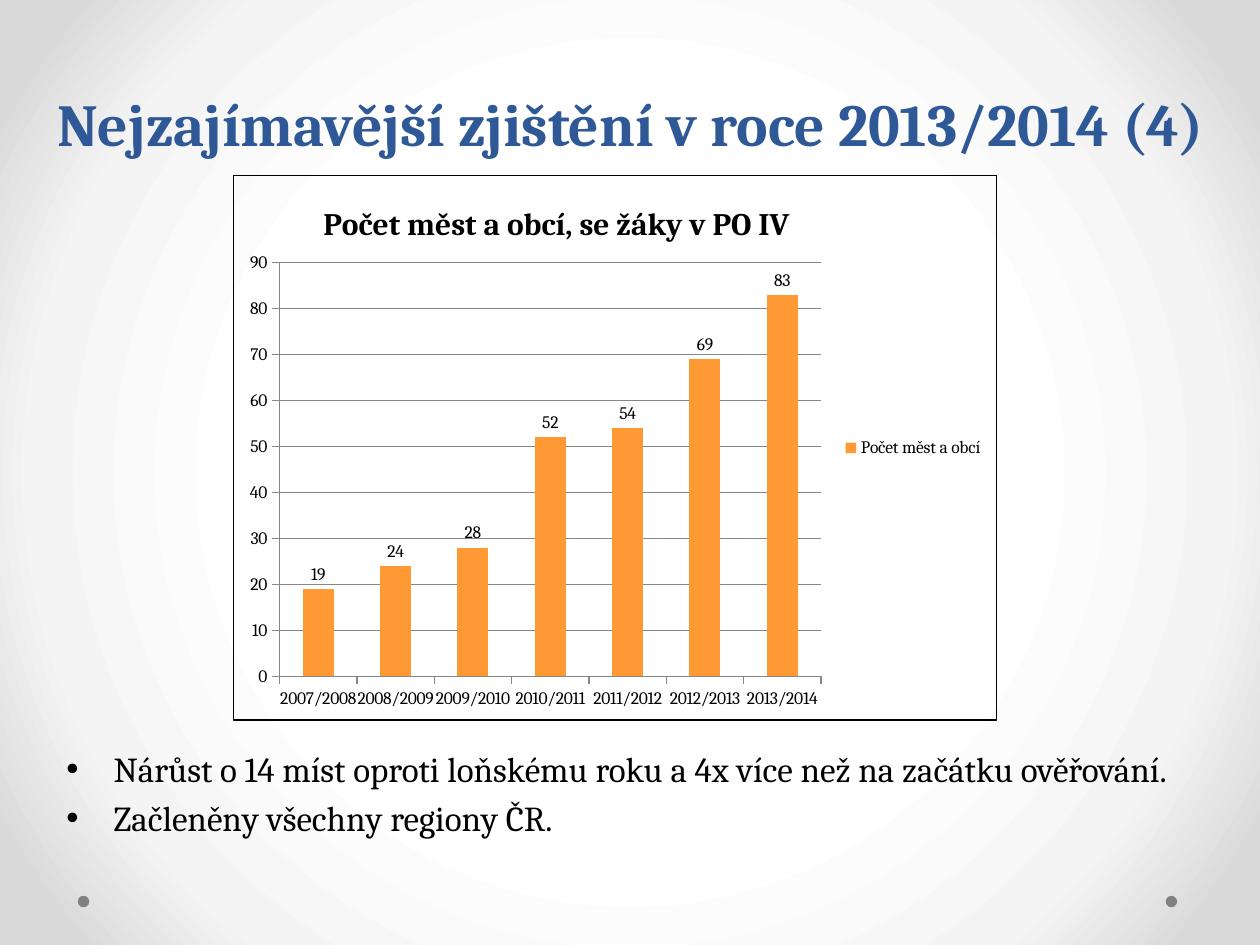
from dataclasses import dataclass

from pptx import Presentation
from pptx import util as u
from pptx.chart import data as chart_data
from pptx.dml import color as colors
from pptx.enum import chart as charts, shapes, text
from pptx.oxml import parse_xml
from pptx.oxml import ns


@dataclass(frozen=True)
class Theme:
    font: str = "Cambria"
    title: str = "2F5897"
    ink: str = "000000"
    bar: str = "FF9933"
    axis: str = "868686"
    dot: str = "808080"
    title_size: int = 34
    body_size: int = 20
    chart_title_size: int = 18
    chart_size: int = 10
    backdrop: tuple = ((50, "FFFFFF"), (76, "F4F4F4"), (92, "DADADA"))


@dataclass(frozen=True)
class Box:
    left: float
    top: float
    width: float
    height: float

    def lengths(self):
        return [u.Cm(v) for v in (self.left, self.top, self.width, self.height)]


THEME = Theme()
SERIES_NAME = "Počet měst a obcí"
COUNTS = [19, 24, 28, 52, 54, 69, 83]
YEARS = [f"{year}/{year + 1}" for year in range(2007, 2007 + len(COUNTS))]
FINDINGS = [
    "Nárůst o 14 míst oproti loňskému roku a 4x více než na začátku ověřování.",
    "Začleněny všechny regiony ČR.",
]


def rgb(value):
    return colors.RGBColor.from_string(value)


def apply(target, values):
    for name, value in values.items():
        setattr(target, name, value)


def style_font(font, size, color, bold=False):
    apply(font, {"name": THEME.font, "size": u.Pt(size), "bold": bold})
    font.color.rgb = rgb(color)


def paint_background(slide):
    slide.background.fill.gradient()
    gradient = slide.element.find(".//" + ns.qn("a:gradFill"))
    stops = "".join(
        f'<a:gs pos="{position * 1000}"><a:srgbClr val="{color}"/></a:gs>'
        for position, color in THEME.backdrop
    )
    gradient.getparent().replace(gradient, parse_xml(
        f'<a:gradFill {ns.nsdecls("a")} rotWithShape="1"><a:gsLst>{stops}</a:gsLst>'
        '<a:path path="circle"><a:fillToRect l="50000" t="50000" r="50000" b="50000"/>'
        "</a:path></a:gradFill>"
    ))


def add_dots(slide, box):
    size = box.height
    for left in (box.left + box.width - size, box.left):
        dot = slide.shapes.add_shape(
            shapes.MSO_SHAPE.OVAL, *Box(left, box.top, size, size).lengths())
        dot.shadow.inherit = False
        dot.fill.solid()
        dot.fill.fore_color.rgb = rgb(THEME.dot)
        dot.line.fill.background()


def add_title(slide, box):
    frame = slide.shapes.add_textbox(*box.lengths()).text_frame
    apply(frame, {"word_wrap": True, "vertical_anchor": text.MSO_ANCHOR.BOTTOM})
    paragraph = frame.paragraphs[0]
    apply(paragraph, {
        "text": "Nejzajímavější zjištění v roce 2013/2014 (4)",
        "alignment": text.PP_ALIGN.CENTER,
        "line_spacing": u.Pt(58),
    })
    style_font(paragraph.runs[0].font, THEME.title_size, THEME.title, True)


def add_findings(slide, box):
    frame = slide.shapes.add_textbox(*box.lengths()).text_frame
    frame.word_wrap = True
    indent = u.Cm(0.95)
    for index, finding in enumerate(FINDINGS):
        paragraph = frame.add_paragraph() if index else frame.paragraphs[0]
        apply(paragraph, {"text": finding, "space_before": u.Pt(4)})
        style_font(paragraph.runs[0].font, THEME.body_size, THEME.ink)
        properties = paragraph._p.get_or_add_pPr()
        properties.set("marL", str(indent))
        properties.set("indent", str(-indent))
        for bullet in ('buFont {} typeface="Arial"', 'buChar {} char="•"'):
            properties.append(parse_xml(f'<a:{bullet.format(ns.nsdecls("a"))}/>'))


def manual_layout(**values):
    parts = "".join(f'<c:{name} val="{value}"/>' for name, value in values.items())
    return parse_xml(
        f'<c:layout {ns.nsdecls("c")}><c:manualLayout>{parts}</c:manualLayout></c:layout>')


def set_layout(element, index, layout):
    for old in element.findall(ns.qn("c:layout")):
        element.remove(old)
    element.insert(index, layout)


def frame_chart(chart):
    space = chart.element
    body = space.find(ns.qn("c:chart"))
    body.addnext(parse_xml(
        f'<c:spPr {ns.nsdecls("c", "a")}><a:noFill/><a:ln w="{u.Pt(0.75)}">'
        f'<a:solidFill><a:srgbClr val="{THEME.ink}"/></a:solidFill></a:ln></c:spPr>'
    ))
    set_layout(body.find(ns.qn("c:title")), 1, manual_layout(
        xMode="edge", yMode="edge", x=0.11, y=0.04))
    set_layout(body.find(ns.qn("c:plotArea")), 0, manual_layout(
        layoutTarget="inner", xMode="edge", yMode="edge", x=0.06, y=0.16, w=0.71, h=0.76))


def add_town_chart(slide, box):
    data = chart_data.CategoryChartData()
    data.categories = YEARS
    data.add_series(SERIES_NAME, COUNTS)
    chart = slide.shapes.add_chart(
        charts.XL_CHART_TYPE.COLUMN_CLUSTERED, *box.lengths(), data).chart
    style_font(chart.font, THEME.chart_size, THEME.ink)
    apply(chart, {"has_title": True, "has_legend": True})
    apply(chart.legend, {
        "position": charts.XL_LEGEND_POSITION.RIGHT, "include_in_layout": False})
    paragraph = chart.chart_title.text_frame.paragraphs[0]
    paragraph.text = "Počet měst a obcí, se žáky v PO IV"
    style_font(paragraph.runs[0].font, THEME.chart_title_size, THEME.ink, True)

    apply(chart.value_axis, {
        "minimum_scale": 0, "maximum_scale": 90, "major_unit": 10,
        "has_major_gridlines": True,
    })
    lines = [chart.value_axis.major_gridlines.format.line]
    for axis in (chart.category_axis, chart.value_axis):
        apply(axis, {
            "major_tick_mark": charts.XL_TICK_MARK.OUTSIDE,
            "minor_tick_mark": charts.XL_TICK_MARK.NONE,
        })
        lines.append(axis.format.line)
    for line in lines:
        line.width = u.Pt(0.75)
        line.color.rgb = rgb(THEME.axis)

    plot = chart.plots[0]
    apply(plot, {"gap_width": 150, "vary_by_categories": False, "has_data_labels": True})
    apply(plot.data_labels, {
        "show_value": True, "position": charts.XL_LABEL_POSITION.OUTSIDE_END})
    fill = plot.series[0].format.fill
    fill.solid()
    fill.fore_color.rgb = rgb(THEME.bar)
    frame_chart(chart)


def main():
    presentation = Presentation()
    apply(presentation, {"slide_width": u.Cm(25.4), "slide_height": u.Cm(19.05)})
    slide = presentation.slides.add_slide(presentation.slide_layouts[6])
    paint_background(slide)
    add_dots(slide, Box(1.57, 18.06, 22.16, 0.23))
    add_title(slide, Box(0.71, 1.32, 24, 2))
    add_findings(slide, Box(1.09, 14.94, 23.2, 2.8))
    add_town_chart(slide, Box(4.7, 3.53, 15.4, 11))
    presentation.save("out.pptx")


if __name__ == "__main__":
    main()
